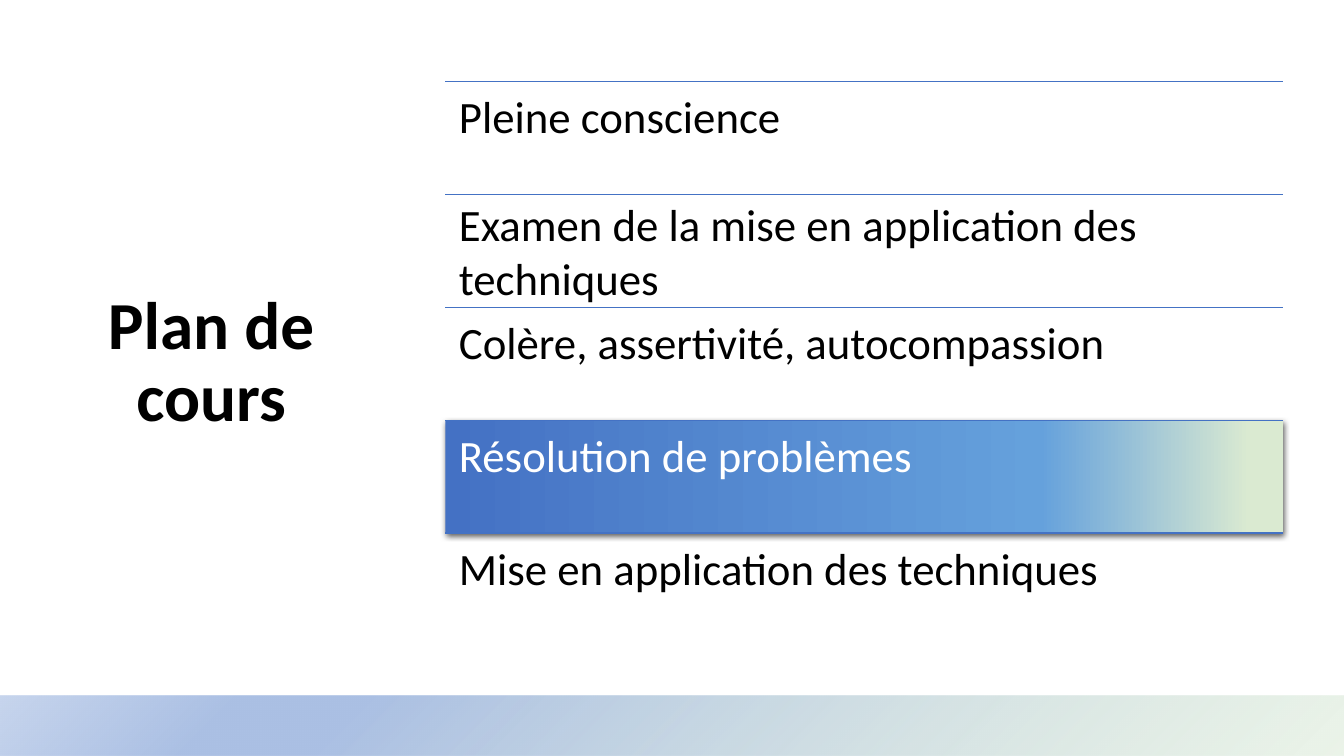
from pptx import Presentation
from pptx.dml.color import RGBColor
from pptx.enum.shapes import MSO_CONNECTOR, MSO_SHAPE
from pptx.enum.text import MSO_ANCHOR, PP_ALIGN
from pptx.oxml import parse_xml
from pptx.oxml.ns import nsdecls
from pptx.util import Pt

FONT = "Calibri"
BLACK, WHITE, BLUE = "000000", "FFFFFF", "4472C4"
WIDTH, HEIGHT = 960, 540
FOOTER_HEIGHT = 43.2
TOPICS = [
    ["Pleine conscience"],
    ["Examen de la mise en application des", "techniques"],
    ["Colère, assertivité, autocompassion"],
    ["Résolution de problèmes"],
    ["Mise en application des techniques"],
]
CURRENT_TOPIC = 3


def color(hex_string):
    return RGBColor.from_string(hex_string)


def add_gradient_box(slide, box, stops, direction):
    """Add a borderless rectangle; stops are (position %, colour, opacity %)."""
    shape = slide.shapes.add_shape(MSO_SHAPE.RECTANGLE, *map(Pt, box))
    stop_xml = "".join(
        f'<a:gs pos="{position * 1000}"><a:srgbClr val="{hex_string}">'
        f'<a:alpha val="{opacity * 1000}"/></a:srgbClr></a:gs>'
        for position, hex_string, opacity in stops
    )
    gradient = parse_xml(
        f'<a:gradFill {nsdecls("a")} rotWithShape="1">'
        f"<a:gsLst>{stop_xml}</a:gsLst>{direction}</a:gradFill>"
    )
    shape._element.spPr.prstGeom.addnext(gradient)
    shape.line.fill.background()
    shape.shadow.inherit = False
    return shape


def add_text(slide, box, lines, size, hex_string, anchor, inset=(7.2, 3.6)):
    frame = slide.shapes.add_textbox(*map(Pt, box)).text_frame
    frame.word_wrap = True
    frame.vertical_anchor = anchor
    frame.margin_left = frame.margin_right = Pt(inset[0])
    frame.margin_top = frame.margin_bottom = Pt(inset[1])
    frame.text = "\n".join(lines)
    for paragraph in frame.paragraphs:
        paragraph.font.name = FONT
        paragraph.font.size = Pt(size)
        paragraph.font.color.rgb = color(hex_string)
    return frame


def add_footer(slide, box):
    add_gradient_box(
        slide, box,
        [(0, "D6E8D1", 47), (74, "ABC0E4", 100), (83, "ABC0E4", 100), (100, "C7D5ED", 100)],
        '<a:path path="circle"><a:fillToRect l="100000" t="100000"/></a:path>'
        '<a:tileRect r="-100000" b="-100000"/>',
    )


def add_title(slide, box):
    frame = add_text(slide, box, ["Plan de cours"], 48, BLACK, MSO_ANCHOR.MIDDLE)
    paragraph = frame.paragraphs[0]
    paragraph.font.bold = True
    paragraph.alignment = PP_ALIGN.CENTER
    paragraph.line_spacing = 0.9
    paragraph.space_after = Pt(6)


def add_highlight(slide, box):
    shape = add_gradient_box(
        slide, box,
        [(0, "4471C4", 100), (71, "65A1DC", 100), (96, "DAEAD1", 100)],
        '<a:lin ang="0" scaled="0"/>',
    )
    shape._element.spPr.find("{*}effectLst").append(parse_xml(
        f'<a:outerShdw {nsdecls("a")} blurRad="{Pt(4.5)}" dist="{Pt(1.5)}" '
        'dir="5400000" algn="ctr" rotWithShape="0">'
        f'<a:srgbClr val="{BLACK}"><a:alpha val="63000"/></a:srgbClr></a:outerShdw>'
    ))


def add_rule(slide, left, top, width):
    rule = slide.shapes.add_connector(
        MSO_CONNECTOR.STRAIGHT, Pt(left), Pt(top), Pt(left + width), Pt(top))
    rule.line.color.rgb = color(BLUE)
    rule.line.width = Pt(1)
    rule._element.spPr.append(parse_xml(f'<a:effectLst {nsdecls("a")}/>'))


def add_agenda(slide, box):
    """Stack the topics in equal rows, with the current one highlighted."""
    left, top, width, height = box
    row_height = height / len(TOPICS)
    add_highlight(slide, (left, top + CURRENT_TOPIC * row_height, width, row_height))
    for index, lines in enumerate(TOPICS):
        row_top = top + index * row_height
        add_rule(slide, left, row_top, width)
        several = len(lines) > 1
        frame = add_text(
            slide, (left, row_top, width, row_height), lines, 32,
            WHITE if index == CURRENT_TOPIC else BLACK,
            MSO_ANCHOR.MIDDLE if several else MSO_ANCHOR.TOP, (9.6, 9.6))
        if not several:
            frame.paragraphs[0].line_spacing = 0.9


def main():
    presentation = Presentation()
    presentation.slide_width = Pt(WIDTH)
    presentation.slide_height = Pt(HEIGHT)
    slide = presentation.slides.add_slide(presentation.slide_layouts[6])
    add_footer(slide, (0, HEIGHT - FOOTER_HEIGHT, WIDTH, FOOTER_HEIGHT))
    add_title(slide, (60.5, 128.2, 180.7, 263.5))
    add_agenda(slide, (318.2, 58.3, 598.3, 403.2))
    presentation.save("out.pptx")


if __name__ == "__main__":
    main()
